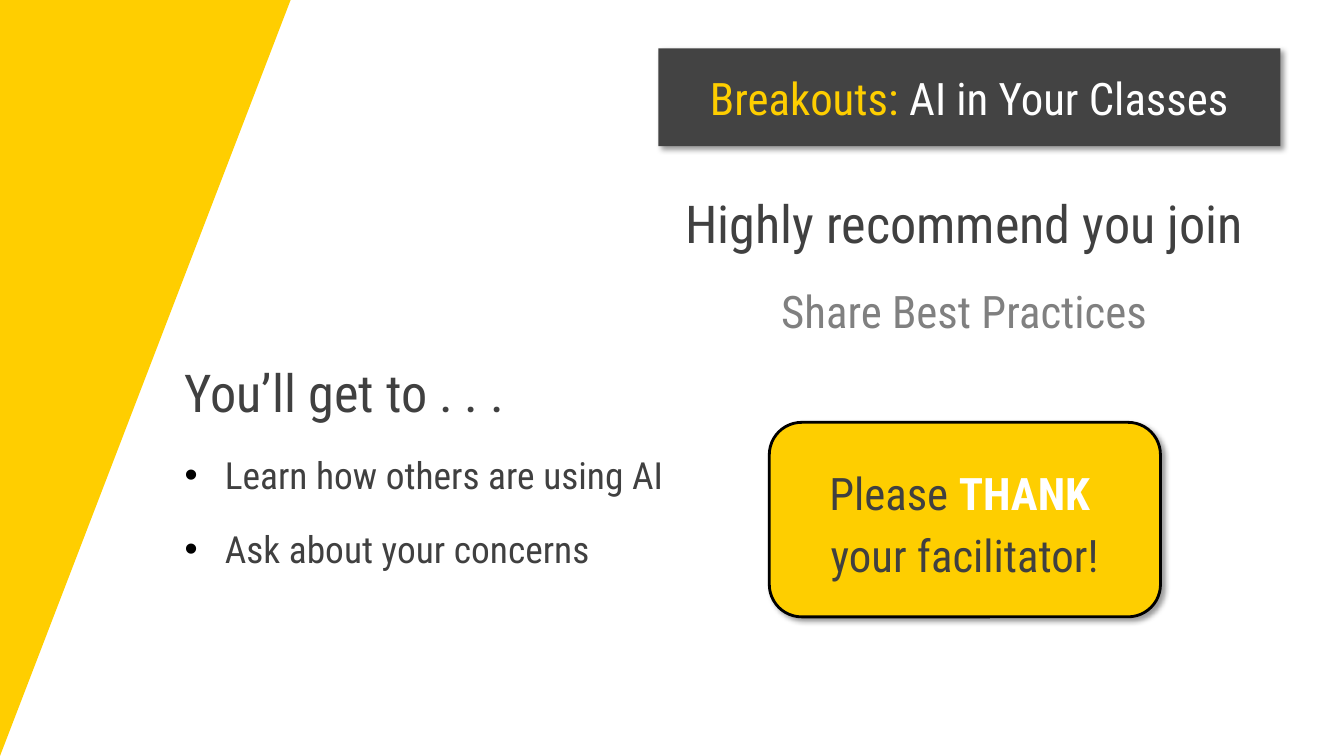
from lxml.etree import SubElement
from pptx import Presentation
from pptx.dml.color import RGBColor
from pptx.enum.shapes import MSO_SHAPE
from pptx.enum.text import MSO_ANCHOR, MSO_AUTO_SIZE, PP_ALIGN
from pptx.oxml import parse_xml
from pptx.oxml.ns import nsdecls, qn
from pptx.util import Inches, Pt

COLORS = {
    "wedge": "FFCE00", "yellow": "FECE00", "bar": "434343", "dark": "404040",
    "gray": "808080", "white": "FFFFFF", "black": "000000",
}


def add_run(p, text, size, color, bold=False):
    r = p.add_run()
    r.text = text
    r.font.name = "Roboto Condensed"
    r.font.size = Pt(size)
    r.font.bold = bold
    r.font.color.rgb = RGBColor.from_string(COLORS[color])


def add_shadow(sp):
    sp._element.spPr.append(parse_xml(
        f'<a:effectLst {nsdecls("a")}>'
        '<a:outerShdw blurRad="50800" dist="38100" dir="2700000" algn="tl" rotWithShape="0">'
        f'<a:srgbClr val="{COLORS["black"]}"><a:alpha val="40000"/></a:srgbClr>'
        '</a:outerShdw></a:effectLst>'))


prs = Presentation()
prs.slide_width, prs.slide_height = Inches(13.33), Inches(7.5)
s = prs.slides.add_slide(prs.slide_layouts[5])

# Yellow wedge, right angle at the top left
wedge = s.shapes.add_shape(MSO_SHAPE.RIGHT_TRIANGLE, Inches(0), Inches(-0.02),
                           Inches(2.89), Inches(7.52))
wedge._element.spPr.find(qn("a:xfrm")).set("flipV", "1")
wedge.shadow.inherit = False
wedge.fill.solid()
wedge.fill.fore_color.rgb = RGBColor.from_string(COLORS["wedge"])
wedge.line.fill.background()

# Title bar
title = s.shapes.title
title.left, title.top = Inches(6.53), Inches(0.48)
title.width, title.height = Inches(6.17), Inches(0.97)
title._element.spPr.append(parse_xml(
    f'<a:prstGeom {nsdecls("a")} prst="roundRect"><a:avLst/></a:prstGeom>'))
title.fill.solid()
title.fill.fore_color.rgb = RGBColor.from_string(COLORS["bar"])
add_shadow(title)
tf = title.text_frame
tf.auto_size = MSO_AUTO_SIZE.NONE
tf.vertical_anchor = MSO_ANCHOR.MIDDLE
p = tf.paragraphs[0]
p.alignment = PP_ALIGN.CENTER
add_run(p, "Breakouts:", 32, "yellow")
add_run(p, " AI in Your Classes", 32, "white")

# Text blocks: left, top, width, height, alignment, (text, size, color, bulleted)
blocks = [
    (6.33, 1.68, 6.47, 0.97, PP_ALIGN.CENTER,
     [("Highly recommend you join", 37.3, "dark", False)]),
    (6.33, 2.61, 6.47, 0.97, PP_ALIGN.CENTER,
     [("Share Best Practices", 32, "gray", False)]),
    (1.7, 3.35, 5.68, 3.85, PP_ALIGN.LEFT,
     [("You’ll get to . . .", 37.3, "dark", False),
      ("Learn how others are using AI", 26.7, "dark", True),
      ("Ask about your concerns", 26.7, "dark", True)]),
]
for left, top, width, height, align, lines in blocks:
    tf = s.shapes.add_textbox(Inches(left), Inches(top), Inches(width),
                              Inches(height)).text_frame
    tf.word_wrap = True
    tf.margin_left = tf.margin_right = tf.margin_top = tf.margin_bottom = Inches(0.13)
    for i, (text, size, color, bulleted) in enumerate(lines):
        p = tf.add_paragraph() if i else tf.paragraphs[0]
        p.alignment = align
        p.line_spacing = 1.15
        p.space_after = Pt(16)
        add_run(p, text, size, color)
        if bulleted:
            pPr = p._p.get_or_add_pPr()
            pPr.set("marL", str(Inches(0.4)))
            pPr.set("indent", str(Inches(-0.4)))
            bullet_color = SubElement(pPr, qn("a:buClr"))
            SubElement(bullet_color, qn("a:srgbClr"), val=COLORS["black"])
            SubElement(pPr, qn("a:buFont"), typeface="Arial")
            SubElement(pPr, qn("a:buChar"), char="•")

# Thank-you card
card = s.shapes.add_shape(MSO_SHAPE.ROUNDED_RECTANGLE, Inches(7.63), Inches(4.19),
                          Inches(3.88), Inches(1.93))
card.fill.solid()
card.fill.fore_color.rgb = RGBColor.from_string(COLORS["yellow"])
card.line.color.rgb = RGBColor.from_string(COLORS["black"])
card.line.width = Pt(2)
add_shadow(card)
tf = card.text_frame
tf.word_wrap = True
tf.vertical_anchor = MSO_ANCHOR.MIDDLE
p = tf.paragraphs[0]
p.alignment = PP_ALIGN.CENTER
p.line_spacing = 1.15
p.space_after = Pt(16)
add_run(p, "Please ", 32, "dark")
add_run(p, "THANK ", 32, "white", bold=True)
p.add_line_break()
add_run(p, "your facilitator!", 32, "dark")

prs.save("out.pptx")
